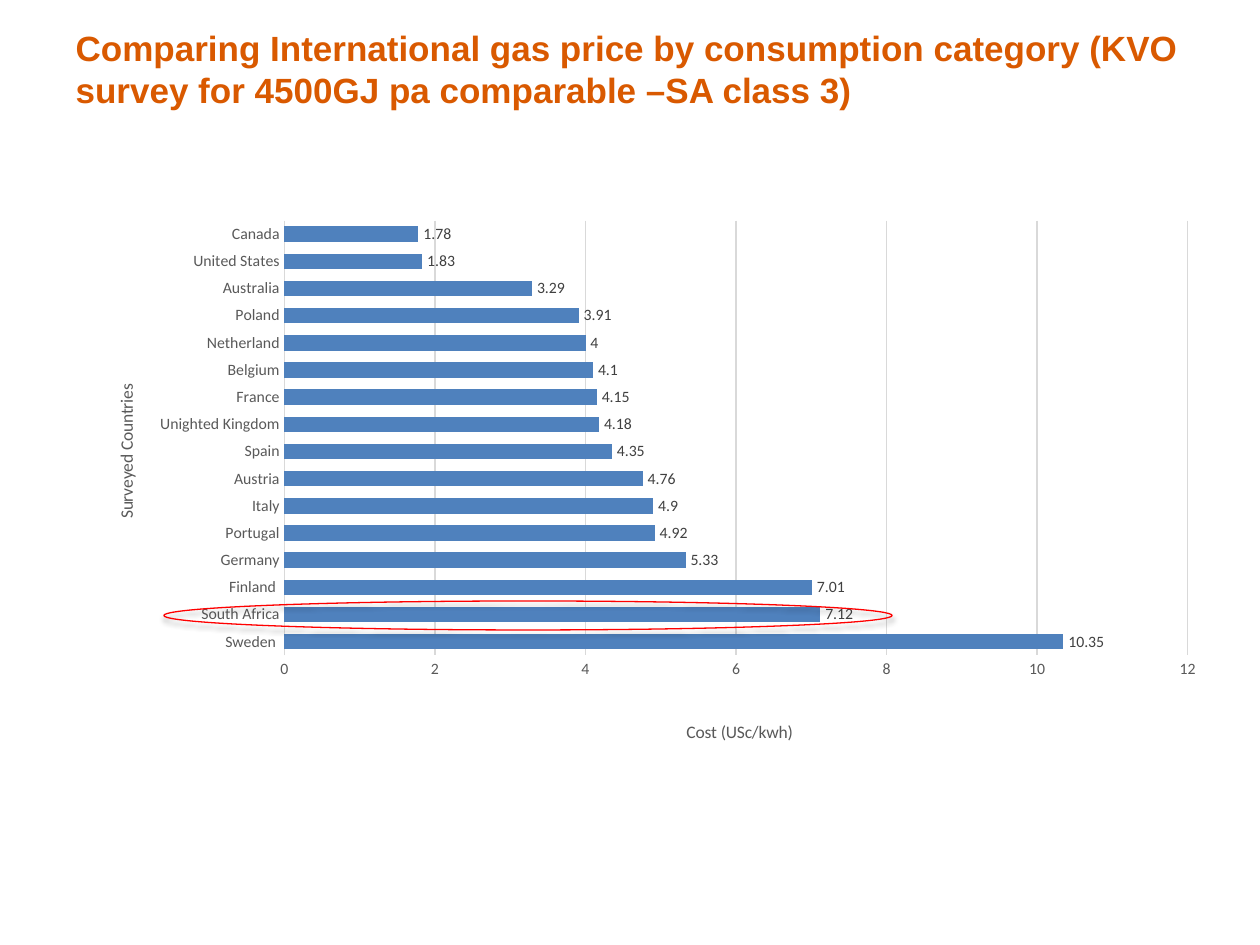
from lxml.etree import SubElement
from pptx import Presentation
from pptx.chart.data import CategoryChartData
from pptx.dml.color import RGBColor
from pptx.enum.chart import XL_CHART_TYPE, XL_LABEL_POSITION, XL_TICK_MARK
from pptx.enum.shapes import MSO_SHAPE
from pptx.enum.text import MSO_ANCHOR, MSO_AUTO_SIZE, PP_ALIGN
from pptx.oxml import parse_xml
from pptx.oxml.ns import nsdecls, qn
from pptx.util import Inches, Pt

COLORS = {"title": "D95900", "bar": "4F81BD", "axis": "595959",
          "label": "404040", "grid": "D9D9D9", "ring": "FF0000"}
COSTS = [("Sweden ", 10.35), ("South Africa", 7.12), ("Finland ", 7.01),
         ("Germany", 5.33), ("Portugal", 4.92), ("Italy", 4.9),
         ("Austria", 4.76), ("Spain", 4.35), ("Unighted Kingdom", 4.18),
         ("France", 4.15), ("Belgium", 4.1), ("Netherland", 4),
         ("Poland", 3.91), ("Australia", 3.29), ("United States", 1.83),
         ("Canada", 1.78)]


def style(font, size, color, name="Calibri", bold=False):
    font.size, font.name, font.bold = Pt(size), name, bold
    font.color.rgb = RGBColor.from_string(COLORS[color])


def place(owner, **values):
    """Give a chart part a manual layout, in fractions of the chart."""
    layout = owner.find(qn("c:layout"))
    if layout is None:
        layout = parse_xml(f"<c:layout {nsdecls('c')}/>")
        text = owner.find(qn("c:tx"))
        if text is None:
            owner.insert(0, layout)
        else:
            text.addnext(layout)
    manual = SubElement(layout, qn("c:manualLayout"))
    for key, value in values.items():
        SubElement(manual, qn(f"c:{key}")).set("val", str(value))


deck = Presentation()
deck.slide_width, deck.slide_height = Inches(10), Inches(7.5)
slide = deck.slides.add_slide(deck.slide_layouts[5])

# Title
title = slide.shapes.title
title.left, title.top = Inches(0.5), Inches(0.25)
title.width, title.height = Inches(9), Inches(0.58)
frame = title.text_frame
frame.text = ("Comparing International gas price by consumption category "
              "(KVO survey for 4500GJ pa comparable –SA class 3)")
frame.word_wrap = True
frame.auto_size = MSO_AUTO_SIZE.NONE
frame.vertical_anchor = MSO_ANCHOR.MIDDLE
frame.paragraphs[0].alignment = PP_ALIGN.LEFT
style(frame.paragraphs[0].runs[0].font, 20, "title", "Arial", True)

# Bar chart
data = CategoryChartData()
data.categories = [name for name, cost in COSTS]
data.add_series("Series 1", [cost for name, cost in COSTS])
chart = slide.shapes.add_chart(
    XL_CHART_TYPE.BAR_CLUSTERED, Inches(0), Inches(0.99),
    Inches(9.86), Inches(5.81), data).chart
chart.has_title = chart.has_legend = False
chart.font.size, chart.font.name = Pt(10), "Calibri"
plot = chart.plots[0]
plot.gap_width, plot.overlap, plot.vary_by_categories = 75, -25, False
fill = plot.series[0].format.fill
fill.solid()
fill.fore_color.rgb = RGBColor.from_string(COLORS["bar"])
place(chart.element.find(f".//{qn('c:plotArea')}"), layoutTarget="inner",
      xMode="edge", yMode="edge", x=0.229, y=0.131, w=0.727, h=0.594)

# Value labels
plot.has_data_labels = True
labels = plot.data_labels
labels.show_value = True
labels.position = XL_LABEL_POSITION.OUTSIDE_END
style(labels.font, 9, "label")

# Axes and their titles
nations, costs = chart.category_axis, chart.value_axis
for axis, text, x, y in ((nations, "Surveyed Countries", 0.09, 0.35),
                         (costs, "Cost (USc/kwh)", 0.55, 0.81)):
    axis.major_tick_mark = axis.minor_tick_mark = XL_TICK_MARK.NONE
    style(axis.tick_labels.font, 9, "axis")
    axis.axis_title.text_frame.text = text
    run = axis.axis_title.text_frame.paragraphs[0].runs[0]
    style(run.font, 10, "axis")
    place(axis.axis_title.element if hasattr(axis.axis_title, "element")
          else axis.axis_title._element, xMode="edge", yMode="edge", x=x, y=y)
costs.minimum_scale, costs.maximum_scale, costs.major_unit = 0, 12, 2
costs.has_major_gridlines = True
costs.format.line.fill.background()
for line in (nations.format.line, costs.major_gridlines.format.line):
    line.color.rgb = RGBColor.from_string(COLORS["grid"])
    line.width = Pt(0.75)

# Ring around South Africa, with a soft shadow
ring = slide.shapes.add_shape(MSO_SHAPE.OVAL, Inches(1.3), Inches(4.77),
                              Inches(5.78), Inches(0.23))
ring.fill.background()
ring.line.color.rgb = RGBColor.from_string(COLORS["ring"])
ring.line.width = Pt(0.75)
ring.shadow.inherit = False
effects = ring.element.spPr.find(qn("a:effectLst"))
effects.append(parse_xml(
    f'<a:outerShdw {nsdecls("a")} blurRad="{Pt(3.1)}" dist="{Pt(1.8)}" '
    'dir="5400000" rotWithShape="0"><a:srgbClr val="000000">'
    '<a:alpha val="35000"/></a:srgbClr></a:outerShdw>'))

deck.save("out.pptx")
